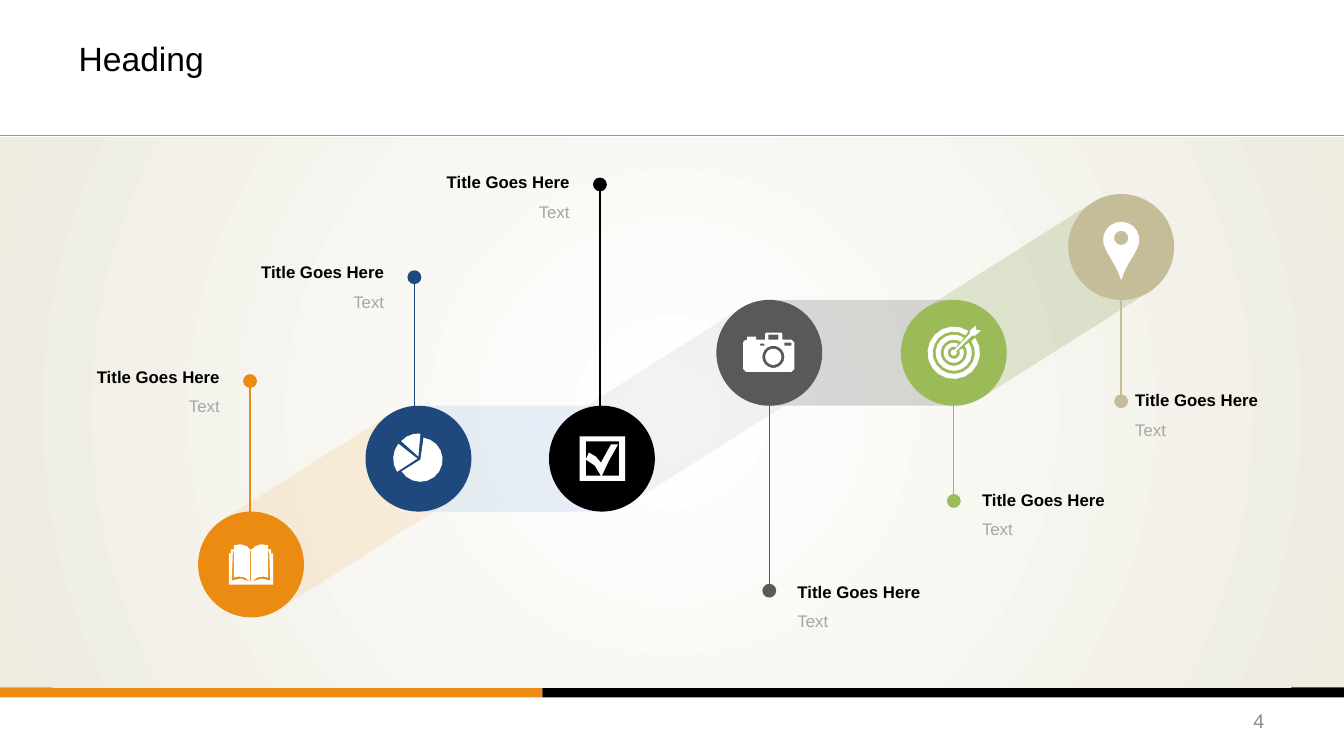
import math
from dataclasses import dataclass

import lxml.etree
import pptx
import pptx.dml.color
import pptx.enum.shapes
import pptx.enum.text
import pptx.oxml.ns
import pptx.util

Inches = pptx.util.Inches
SHAPE = pptx.enum.shapes.MSO_SHAPE
ALIGN = pptx.enum.text.PP_ALIGN
qn = pptx.oxml.ns.qn


@dataclass(frozen=True)
class Theme:
    font: str = "Arial"
    head: int = 24
    page: int = 14
    body: int = 12
    black: str = "000000"
    white: str = "FFFFFF"
    cream: str = "EEECE1"
    orange: str = "EB8B11"
    navy: str = "1F497D"
    gray: str = "595959"
    green: str = "9BBB59"
    tan: str = "C4BD97"
    soft: str = "A6A6A6"
    mute: str = "8C8C8C"
    rule: str = "969696"
    bands: tuple = ("F5BA6F", "8EB4E3", "BFBFBF", "434343", "77933C")


T = Theme()


# Basic helpers
def rgb(code):
    return pptx.dml.color.RGBColor.from_string(code)


def put(item, vals):
    for key, val in vals.items():
        setattr(item, key, val)


def add(parent, tag, **vals):
    return lxml.etree.SubElement(parent, qn(tag), vals)


def paint(shape, color):
    shape.shadow.inherit = False
    shape.fill.solid()
    shape.fill.fore_color.rgb = rgb(color)
    shape.line.fill.background()


def block(slide, kind, box, color):
    shape = slide.shapes.add_shape(kind, *map(Inches, box))
    paint(shape, color)
    return shape


def line(slide, start, end, color, width):
    link = slide.shapes.add_connector(
        pptx.enum.shapes.MSO_CONNECTOR.STRAIGHT, *map(Inches, (*start, *end)))
    link.line.color.rgb = rgb(color)
    link.line.width = pptx.util.Pt(width)
    add(link._element.spPr, "a:effectLst")
    return link


def write(shape, text, size, color, bold=False, align=ALIGN.LEFT, pad=(0, 0), mid=False):
    anchor = pptx.enum.text.MSO_ANCHOR
    frame = shape.text_frame
    frame.text = text
    side, edge = map(Inches, pad)
    put(frame, dict(word_wrap=True, margin_left=side, margin_right=side,
                    margin_top=edge, margin_bottom=edge,
                    vertical_anchor=anchor.MIDDLE if mid else anchor.TOP))
    para = frame.paragraphs[0]
    put(para, dict(alignment=align, line_spacing=0.9 if bold else 1.0))
    put(para.font, dict(name=T.font, size=pptx.util.Pt(size), bold=bold))
    para.font.color.rgb = rgb(color)


def label(slide, box, *args, **opts):
    write(slide.shapes.add_textbox(*map(Inches, box)), *args, **opts)


# Outlines, in inches from the centre of a disc
def arc(x, y, r, start=0, end=360):
    steps = math.ceil(abs(end - start) / 20)
    turns = [math.radians(start + (end - start) * i / steps) for i in range(steps + 1)]
    return [(x + r * math.cos(a), y + r * math.sin(a)) for a in turns]


def wedge(x, y, *args):
    return [(x, y)] + arc(x, y, *args)


def rect(x1, y1, x2, y2):
    return [(x1, y1), (x2, y1), (x2, y2), (x1, y2)]


def flip(points):
    return [(-x, y) for x, y in reversed(points)]


def ring(inner, outer, gap):
    ends = gap - 45, 315 - gap
    return arc(0, 0, outer, *ends) + arc(0, 0, inner, *ends)[::-1]


def book():
    half = [(0.01, -0.15), (0.04, -0.18), (0.1, -0.2), (0.17, -0.19), (0.17, -0.15),
            (0.2, -0.15), (0.2, -0.11), (0.22, -0.11), (0.22, 0.2)]
    slit = [(0.17, -0.13), (0.18, -0.13), (0.19, 0.16), (0.1, 0.14), (0.01, 0.17),
            (0.06, 0.13), (0.12, 0.12), (0.17, 0.13)]
    return [half + flip(half), slit, flip(slit), rect(-0.01, -0.14, 0, 0.17)]


def pie():
    return [wedge(0.02, 0.01, 0.22, -82, 148), wedge(-0.01, 0, 0.24, 147, 218),
            wedge(0, -0.02, 0.23, 222, 275)]


def check():
    hole = [(-0.16, -0.17), (-0.16, 0.17), (-0.01, 0.17), (-0.07, 0.07), (-0.16, 0.01),
            (-0.13, -0.06), (-0.06, -0.02), (-0.01, 0.04), (0.09, -0.14), (0.16, -0.14),
            (0.07, 0.02), (0, 0.17), (0.17, 0.17), (0.17, -0.17)]
    return [rect(-0.22, -0.22, 0.23, 0.22), hole]


def camera():
    body = [(-0.26, -0.1), (-0.25, -0.12), (-0.22, -0.13), (-0.22, -0.16), (-0.13, -0.16),
            (-0.13, -0.13), (-0.04, -0.13), (-0.04, -0.19), (-0.03, -0.2), (0.12, -0.2),
            (0.13, -0.19), (0.13, -0.13), (0.22, -0.13), (0.25, -0.1), (0.25, 0.16),
            (0.22, 0.19), (-0.23, 0.19), (-0.26, 0.16)]
    return [body, rect(-0.01, -0.18, 0.09, -0.13), rect(-0.09, -0.09, -0.05, -0.07),
            rect(0.15, -0.1, 0.22, -0.07), arc(0.04, 0.04, 0.11), arc(0.04, 0.04, 0.08)]


def target():
    dart = [(0, -0.02), (0.16, -0.19), (0.16, -0.22), (0.22, -0.27), (0.22, -0.23),
            (0.27, -0.22), (0.21, -0.17), (0.18, -0.17), (0.02, -0.01)]
    return [ring(0.21, 0.26, 11), ring(0.13, 0.18, 12), ring(0.06, 0.1, 20),
            dart + arc(0, 0, 0.03, -20, 290)]


def pin():
    side = [(0.13, 0.07), (0.07, 0.17), (0.03, 0.25), (0, 0.33)]
    return [arc(0, -0.07, 0.18, 150, 390) + side + flip(side[:-1]), arc(0, -0.09, 0.07)]


def icon(slide, mid, paths):
    build = None
    for path in paths:
        spots = [(Inches(mid[0] + x), Inches(mid[1] + y)) for x, y in path]
        if build is None:
            build = slide.shapes.build_freeform(*spots[0], scale=1.0)
        else:
            build.move_to(*spots[0])
        build.add_line_segments(spots[1:], close=True)
    paint(build.convert_to_shape(), T.white)


# Disc: x, level, colour, icon; stem: x, dot y; label: edge x, top, align
SIZE = 1.05
STEPS = [
    (2.49, 0, T.orange, book, 2.48, 2.42, 2.18, 2.3, ALIGN.RIGHT),
    (4.15, 1, T.navy, pie, 4.11, 1.39, 3.81, 1.26, ALIGN.RIGHT),
    (5.97, 1, T.black, check, 5.95, 0.47, 5.65, 0.37, ALIGN.RIGHT),
    (7.63, 2, T.gray, camera, 7.63, 4.5, 7.91, 4.43, ALIGN.LEFT),
    (9.46, 2, T.green, target, 9.46, 3.61, 9.74, 3.52, ALIGN.LEFT),
    (11.12, 3, T.tan, pin, 11.12, 2.62, 11.26, 2.53, ALIGN.LEFT),
]


def band(slide, start, end, color):
    dx, dy = end[0] - start[0], end[1] - start[1]
    span = math.hypot(dx, dy)
    x, y = (start[0] + end[0]) / 2, (start[1] + end[1]) / 2
    shape = block(slide, SHAPE.RECTANGLE, (x - span / 2, y - SIZE / 2, span, SIZE), color)
    shape.rotation = math.degrees(math.atan2(dy, dx))
    add(shape._element.spPr.find(".//" + qn("a:srgbClr")), "a:alpha", val="20000")


def panel(slide, box):
    shape = block(slide, SHAPE.RECTANGLE, box, T.white)
    shape.fill.gradient()
    for stop, color in zip(shape.fill.gradient_stops, (T.white, T.cream)):
        stop.color.rgb = rgb(color)
    grad = shape._element.spPr.find(qn("a:gradFill"))
    grad.remove(grad.find(qn("a:lin")))
    sides = dict.fromkeys("ltrb", "50000")
    add(add(grad, "a:path", path="circle"), "a:fillToRect", **sides)


def journey(slide, box):
    left, top = box[:2]
    panel(slide, box)
    mids = [(left + step[0], top + 4.24 - SIZE * step[1]) for step in STEPS]
    for start, end, color in zip(mids, mids[1:], T.bands):
        band(slide, start, end, color)
    for mid, (_, _, color, draw, stem, dot, edge, high, align) in zip(mids, STEPS):
        # Stem with a dot
        link = line(slide, (left + stem, top + dot), (left + stem, mid[1]), color, 1)
        add(link.line._get_or_add_ln(), "a:headEnd", type="oval", w="lg", len="lg")
        # Disc with its icon
        disc = (mid[0] - SIZE / 2, mid[1] - SIZE / 2, SIZE, SIZE)
        block(slide, SHAPE.OVAL, disc, color)
        icon(slide, mid, draw())
        # Label
        wide = 1.5
        x = left + edge - (wide if align == ALIGN.RIGHT else 0)
        y = top + high
        label(slide, (x, y, wide, 0.18), "Title Goes Here", T.body, T.black, True, align)
        label(slide, (x, y + 0.27, wide, 0.2), "Text", T.body, T.soft, align=align)


def header(slide, box):
    left, top, wide, high = box
    title = slide.shapes.title
    put(title, dict(zip(("left", "top", "width", "height"),
                        map(Inches, (left + 0.67, top + 0.12, 12, 0.91)))))
    write(title, "Heading", T.head, T.black, pad=(0.11, 0.06), mid=True)
    line(slide, (left, top + high), (left + wide, top + high), T.rule, 0.75)


def footer(slide, box):
    left, top, wide, _ = box
    for x, span, color in ((0, 5.38, T.orange), (5.38, wide - 5.38, T.black)):
        block(slide, SHAPE.RECTANGLE, (left + x, top, span, 0.1), color)
    label(slide, (left + 9.55, top + 0.13, 3.11, 0.4), "4", T.page, T.mute,
          align=ALIGN.RIGHT, pad=(0.12, 0.06), mid=True)


def main():
    deck = pptx.Presentation()
    put(deck, dict(slide_width=Inches(13.33), slide_height=Inches(7.5)))
    slide = deck.slides.add_slide(deck.slide_layouts.get_by_name("Title Only"))
    header(slide, (0, 0, 13.33, 1.34))
    footer(slide, (0, 6.82, 13.33, 0.68))
    journey(slide, (0, 1.36, 13.33, 5.46))
    deck.save("out.pptx")


if __name__ == "__main__":
    main()
